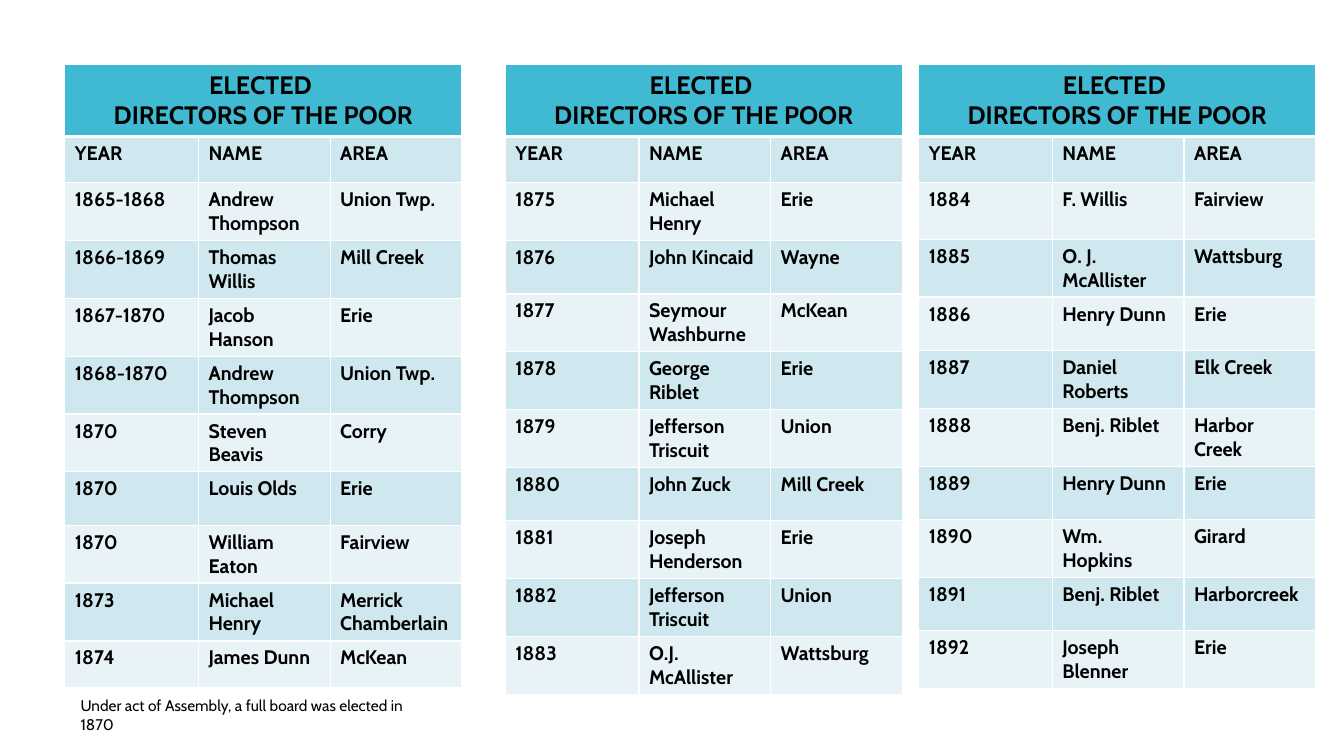
import pptx
import pptx.dml.color
import pptx.enum.text
import pptx.oxml
import pptx.oxml.ns
import pptx.util

FONT = "Cabin"
BLACK, WHITE = "000000", "FFFFFF"
HEADER_FILL, BAND_FILLS = "40BAD2", ("CFE7EE", "E8F3F7")

deck = pptx.Presentation()
deck.slide_width = pptx.util.Inches(13.33)
deck.slide_height = pptx.util.Inches(7.5)

# The slide is a grid of 100 columns by 100 rows
COLUMN = deck.slide_width / 100
ROW = deck.slide_height / 100

TITLE_LINES = ("ELECTED ", "DIRECTORS OF THE POOR")
HEADINGS = ("YEAR", "NAME", "AREA")
COLUMN_WEIGHTS = (1.33, 1.31, 1.31)
ROW_HEIGHTS = (8.67, 6.13, 7.47, 7.07, 7.07, 7.07, 6.13, 7.07, 7.07, 7.07, 6.13)
TABLE_TOP, TABLE_WIDTH = 8.57, 29.53

# Each table: left grid column, then its directors
TABLES = (
    (4.83, (
        ("1865-1868", "Andrew Thompson", "Union Twp."),
        ("1866-1869", "Thomas Willis", "Mill Creek"),
        ("1867-1870", "Jacob Hanson", "Erie"),
        ("1868-1870", "Andrew Thompson", "Union Twp."),
        ("1870", "Steven Beavis", "Corry"),
        ("1870", "Louis Olds", "Erie"),
        ("1870", "William Eaton", "Fairview"),
        ("1873", "Michael Henry", "Merrick Chamberlain"),
        ("1874", "James Dunn", "McKean"),
    )),
    (37.6, (
        ("1875", "Michael Henry", "Erie"),
        ("1876", "John Kincaid", "Wayne"),
        ("1877", "Seymour Washburne", "McKean"),
        ("1878", "George Riblet", "Erie"),
        ("1879", "Jefferson Triscuit", "Union"),
        ("1880", "John Zuck", "Mill Creek"),
        ("1881", "Joseph Henderson", "Erie"),
        ("1882", "Jefferson Triscuit", "Union"),
        ("1883", "O.J. McAllister", "Wattsburg"),
    )),
    (68.36, (
        ("1884", "F. Willis", "Fairview"),
        ("1885", "O. J. McAllister", "Wattsburg"),
        ("1886", "Henry Dunn", "Erie"),
        ("1887", "Daniel Roberts", "Elk Creek"),
        ("1888", "Benj. Riblet", "Harbor Creek"),
        ("1889", "Henry Dunn", "Erie"),
        ("1890", "Wm. Hopkins", "Girard"),
        ("1891", "Benj. Riblet", "Harborcreek"),
        ("1892", "Joseph Blenner", "Erie"),
    )),
)


def color(hex_code):
    return pptx.dml.color.RGBColor.from_string(hex_code)


def grid_box(left, top, width, height):
    return [round(length) for length in
            (left * COLUMN, top * ROW, width * COLUMN, height * ROW)]


def add_run(para, text, size, bold=False):
    span = para.add_run()
    span.text = text
    span.font.name = FONT
    span.font.size = pptx.util.Pt(size)
    span.font.bold = bold
    span.font.color.rgb = color(BLACK)


def style_cell(cell, fill, top_width=1, bottom_width=1):
    cell.fill.solid()
    cell.fill.fore_color.rgb = color(fill)
    # Borders stand before the fill in the cell properties
    properties = cell._tc.get_or_add_tcPr()
    widths = {"L": 1, "R": 1, "T": top_width, "B": bottom_width}
    for place, (side, width) in enumerate(widths.items()):
        properties.insert(place, pptx.oxml.parse_xml(
            f'<a:ln{side} {pptx.oxml.ns.nsdecls("a")} w="{pptx.util.Pt(width)}">'
            f'<a:solidFill><a:srgbClr val="{WHITE}"/></a:solidFill></a:ln{side}>'))


def add_directors_table(page, box, directors):
    rows = (HEADINGS,) + directors
    table = page.shapes.add_table(len(rows) + 1, len(HEADINGS), *box).table
    for column, weight in zip(table.columns, COLUMN_WEIGHTS):
        column.width = round(box[2] * weight / sum(COLUMN_WEIGHTS))
    for row, height in zip(table.rows, ROW_HEIGHTS):
        row.height = round(height * ROW)

    # Title row across all columns
    title = table.cell(0, 0)
    for cell in table.rows[0].cells:
        style_cell(cell, HEADER_FILL, bottom_width=3)
    title.merge(table.cell(0, len(HEADINGS) - 1))
    frame = title.text_frame
    for index, line in enumerate(TITLE_LINES):
        para = frame.add_paragraph() if index else frame.paragraphs[0]
        para.alignment = pptx.enum.text.PP_ALIGN.CENTER
        add_run(para, line, 18, bold=True)

    # Headings and directors in alternating bands
    for index, row in enumerate(rows):
        for cell, text in zip(table.rows[index + 1].cells, row):
            style_cell(cell, BAND_FILLS[index % 2], top_width=1 if index else 3)
            add_run(cell.text_frame.paragraphs[0], text, 14, bold=True)


def add_footnote(page, box, text):
    frame = page.shapes.add_textbox(*box).text_frame
    frame.word_wrap = True
    frame.auto_size = pptx.enum.text.MSO_AUTO_SIZE.SHAPE_TO_FIT_TEXT
    add_run(frame.paragraphs[0], text, 11)


def add_directors_page():
    page = deck.slides.add_slide(deck.slide_layouts[6])
    for left, directors in TABLES:
        box = grid_box(left, TABLE_TOP, TABLE_WIDTH, sum(ROW_HEIGHTS))
        add_directors_table(page, box, directors)
    add_footnote(page, grid_box(5.25, 91.47, 27.83, 3.87),
                 "Under act of Assembly, a full board was elected in 1870")


if __name__ == "__main__":
    add_directors_page()
    deck.save("out.pptx")
